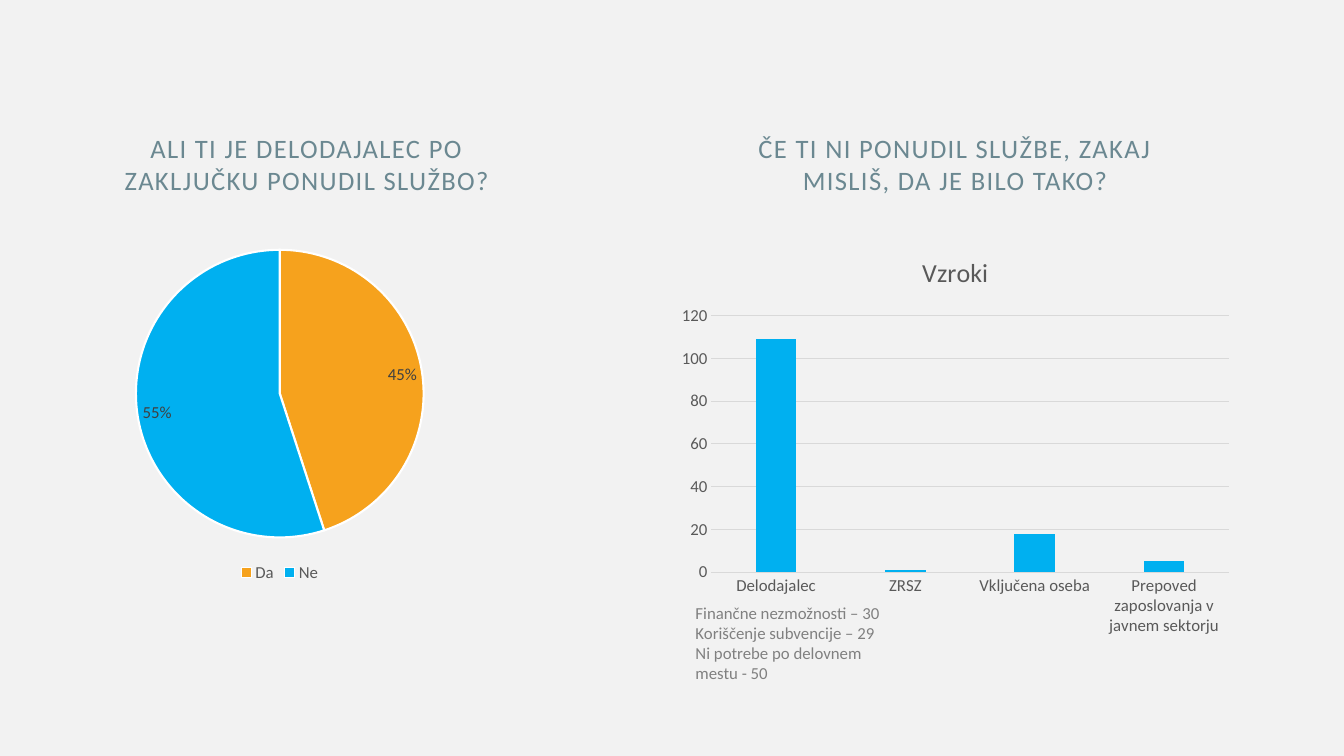
from dataclasses import dataclass

from pptx import Presentation
from pptx.chart.data import CategoryChartData
from pptx.dml.color import RGBColor
from pptx.enum.chart import (
    XL_CHART_TYPE, XL_LABEL_POSITION, XL_LEGEND_POSITION, XL_TICK_MARK)
from pptx.enum.text import MSO_ANCHOR, PP_ALIGN
from pptx.util import Pt

PIE = XL_CHART_TYPE.PIE
COLUMN = XL_CHART_TYPE.COLUMN_CLUSTERED
BEST_FIT = XL_LABEL_POSITION.BEST_FIT
BOTTOM = XL_LEGEND_POSITION.BOTTOM
NO_TICK = XL_TICK_MARK.NONE
CENTER = PP_ALIGN.CENTER
LEFT = PP_ALIGN.LEFT
LOW = MSO_ANCHOR.BOTTOM
TOP = MSO_ANCHOR.TOP


@dataclass(frozen=True)
class Theme:
    font: str = "Calibri"
    back: str = "F2F2F2"
    head: str = "6B8891"
    note: str = "808080"
    axis: str = "595959"
    label: str = "404040"
    grid: str = "D9D9D9"
    edge: str = "FFFFFF"
    yes: str = "F6A21D"
    no: str = "00B0F0"
    head_size: float = 19
    title_size: float = 18.6
    body_size: float = 12


THEME = Theme()


def px(count):
    return count * 9144


def rgb(color):
    return RGBColor.from_string(color)


def set_font(font, size, color):
    font.name = THEME.font
    font.size = Pt(size)
    font.bold = False
    font.color.rgb = rgb(color)


def paint(fill, color):
    fill.solid()
    fill.fore_color.rgb = rgb(color)


def draw_line(line, color, width):
    line.color.rgb = rgb(color)
    line.width = Pt(width)


def add_text(slide, box, lines, size, color, align=LEFT, anchor=TOP):
    frame = slide.shapes.add_textbox(*map(px, box)).text_frame
    frame.word_wrap = True
    frame.vertical_anchor = anchor
    frame.text = "\n".join(lines)
    for para in frame.paragraphs:
        para.alignment = align
        set_font(para.font, size, color)
    return frame


def add_head(slide, left, text):
    frame = add_text(slide, (left, 122, 467, 77), [text],
                     THEME.head_size, THEME.head, CENTER, LOW)
    para = frame.paragraphs[0]
    para.space_before = Pt(10)
    para.runs[0].font._element.set("spc", "100")


def add_chart(slide, kind, box, name, cats, vals, form="General"):
    data = CategoryChartData(number_format=form)
    data.categories = cats
    data.add_series(name, vals)
    chart = slide.shapes.add_chart(kind, *map(px, box), data).chart
    set_font(chart.font, THEME.body_size, THEME.axis)
    chart.has_title = False
    chart.has_legend = False
    return chart


def add_pie(slide, box, name, cats, vals, colors):
    chart = add_chart(slide, PIE, box, name, cats, vals, "0%")
    chart.has_legend = True
    chart.legend.position = BOTTOM
    chart.legend.include_in_layout = False
    set_font(chart.legend.font, THEME.body_size, THEME.axis)
    plot = chart.plots[0]
    plot.vary_by_categories = True
    for index, color in enumerate(colors):
        form = plot.series[0].points[index].format
        paint(form.fill, color)
        draw_line(form.line, THEME.edge, 1.5)
    plot.has_data_labels = True
    labels = plot.data_labels
    labels.show_value = True
    labels.show_percentage = False
    labels.number_format = "0%"
    labels.number_format_is_linked = False
    labels.position = BEST_FIT
    set_font(labels.font, THEME.body_size, THEME.label)


def add_bars(slide, box, name, cats, vals):
    chart = add_chart(slide, COLUMN, box, name, cats, vals)
    chart.has_title = True
    frame = chart.chart_title.text_frame
    frame.text = name
    set_font(frame.paragraphs[0].font, THEME.title_size, THEME.axis)
    plot = chart.plots[0]
    plot.vary_by_categories = False
    plot.gap_width = 219
    plot.overlap = -27
    paint(plot.series[0].format.fill, THEME.no)
    for axis in (chart.category_axis, chart.value_axis):
        axis.major_tick_mark = NO_TICK
        axis.minor_tick_mark = NO_TICK
        set_font(axis.tick_labels.font, THEME.body_size, THEME.axis)
    draw_line(chart.category_axis.format.line, THEME.grid, 0.75)
    chart.value_axis.format.line.fill.background()
    draw_line(chart.value_axis.major_gridlines.format.line, THEME.grid, 0.75)


def main():
    deck = Presentation()
    deck.slide_width, deck.slide_height = px(1333), px(750)
    slide = deck.slides.add_slide(deck.slide_layouts[6])
    paint(slide.background.fill, THEME.back)

    add_head(slide, 71, "ALI TI JE DELODAJALEC PO ZAKLJUČKU PONUDIL SLUŽBO?")
    add_pie(slide, (17, 234, 521, 348), "Series 1", ["Da", "Ne"],
            [0.45, 0.55], [THEME.yes, THEME.no])

    add_bars(slide, (665, 234, 565, 405), "Vzroki",
             ["Delodajalec", "ZRSZ", "Vključena oseba",
              "Prepoved zaposlovanja v javnem sektorju"],
             [109, 1, 18, 5])
    add_head(slide, 714,
             "ČE TI NI PONUDIL SLUŽBE, ZAKAJ MISLIŠ, DA JE BILO TAKO?")
    add_text(slide, (680, 593, 206, 91),
             ["Finančne nezmožnosti – 30",
              "Koriščenje subvencije – 29",
              "Ni potrebe po delovnem mestu - 50"],
             THEME.body_size, THEME.note)
    deck.save("out.pptx")


if __name__ == "__main__":
    main()
